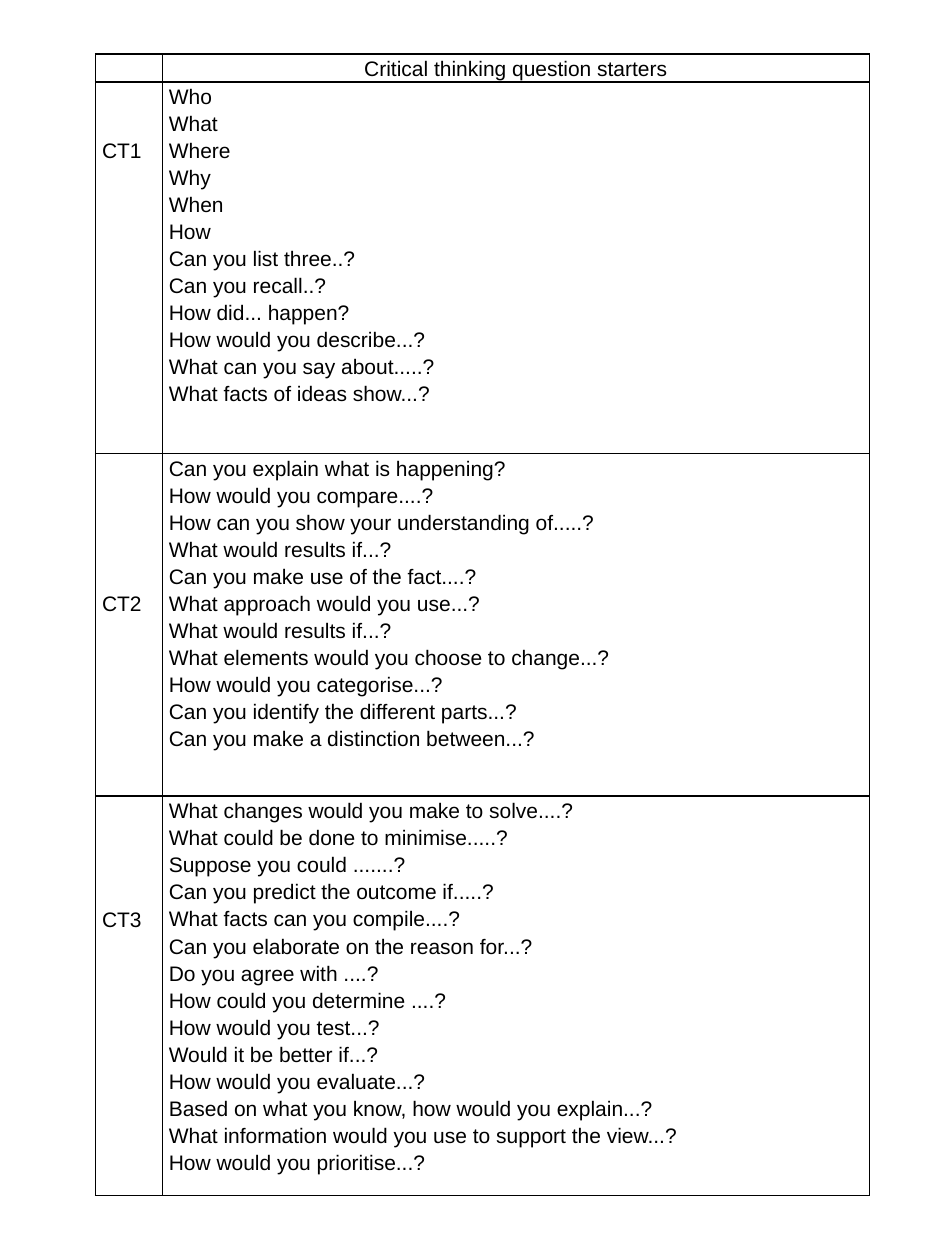
from dataclasses import dataclass

from lxml.etree import SubElement
from pptx import Presentation
from pptx.dml.color import RGBColor
from pptx.enum.text import PP_ALIGN
from pptx.oxml.ns import qn
from pptx.util import Inches, Pt


@dataclass(frozen=True)
class Theme:
    ink: str = "000000"
    font: str = "Arial"
    text_size: int = 12
    line_spacing: float = 1.15
    border_width: int = 1


THEME = Theme()
LINE_HEIGHT = 0.215
COLUMN_WIDTHS = [0.53, 5.61]
ROW_HEIGHTS = [0.22, 2.95, 2.72, 3.17]

HEADING = "Critical thinking question starters"

# Each level: label, lines the label sits below the row top, question starters
LEVELS = [
    ("CT1", 2, [
        "Who",
        "What",
        "Where",
        "Why",
        "When",
        "How",
        "Can you list three..?",
        "Can you recall..?",
        "How did... happen?",
        "How would you describe...?",
        "What can you say about.....?",
        "What facts of ideas show...?",
    ]),
    ("CT2", 5, [
        "Can you explain what is happening?",
        "How would you compare....?",
        "How can you show your understanding of.....?",
        "What would results if...?",
        "Can you make use of the fact....?",
        "What approach would you use...?",
        "What would results if...?",
        "What elements would you choose to change...?",
        "How would you categorise...?",
        "Can you identify the different parts...?",
        "Can you make a distinction between...?",
    ]),
    ("CT3", 4, [
        "What changes would you make to solve....?",
        "What could be done to minimise.....?",
        "Suppose you could .......?",
        "Can you predict the outcome if.....?",
        "What facts can you compile....?",
        "Can you elaborate on the reason for...?",
        "Do you agree with ....?",
        "How could you determine ....?",
        "How would you test...?",
        "Would it be better if...?",
        "How would you evaluate...?",
        "Based on what you know, how would you explain...?",
        "What information would you use to support the view...?",
        "How would you prioritise...?",
    ]),
]


def add_borders(cell):
    properties = cell._tc.get_or_add_tcPr()
    for side in ("lnL", "lnR", "lnT", "lnB"):
        line = SubElement(properties, qn(f"a:{side}"), w=str(Pt(THEME.border_width)))
        fill = SubElement(line, qn("a:solidFill"))
        SubElement(fill, qn("a:srgbClr"), val=THEME.ink)


def fill_cell(cell, lines, alignment=PP_ALIGN.LEFT, lines_above=0):
    cell.margin_left = cell.margin_right = Inches(0.05)
    cell.margin_top = Inches(lines_above * LINE_HEIGHT)
    cell.margin_bottom = 0
    add_borders(cell)
    cell.fill.background()
    cell.text_frame.text = "\n".join(lines)
    for paragraph in cell.text_frame.paragraphs:
        paragraph.alignment = alignment
        paragraph.line_spacing = THEME.line_spacing
        for run in paragraph.runs:
            run.font.name = THEME.font
            run.font.size = Pt(THEME.text_size)
            run.font.color.rgb = RGBColor.from_string(THEME.ink)
        # An empty cell keeps the text size, so its row does not grow
        if not paragraph.runs:
            SubElement(paragraph._p, qn("a:endParaRPr"), sz=str(THEME.text_size * 100))


presentation = Presentation()
presentation.slide_width = Inches(7.5)
presentation.slide_height = Inches(10)
slide = presentation.slides.add_slide(presentation.slide_layouts[6])

# Table grid
table = slide.shapes.add_table(
    len(ROW_HEIGHTS), len(COLUMN_WIDTHS), Inches(0.76), Inches(0.43),
    Inches(sum(COLUMN_WIDTHS)), Inches(sum(ROW_HEIGHTS)),
).table
table.first_row = False
table.horz_banding = False
for column, width in zip(table.columns, COLUMN_WIDTHS):
    column.width = Inches(width)
for row, height in zip(table.rows, ROW_HEIGHTS):
    row.height = Inches(height)

# Heading row
fill_cell(table.cell(0, 0), [])
fill_cell(table.cell(0, 1), [HEADING], PP_ALIGN.CENTER)

# One row for each level
for row_index, (label, lines_above, questions) in enumerate(LEVELS, start=1):
    fill_cell(table.cell(row_index, 0), [label], lines_above=lines_above)
    fill_cell(table.cell(row_index, 1), questions)

presentation.save("out.pptx")
